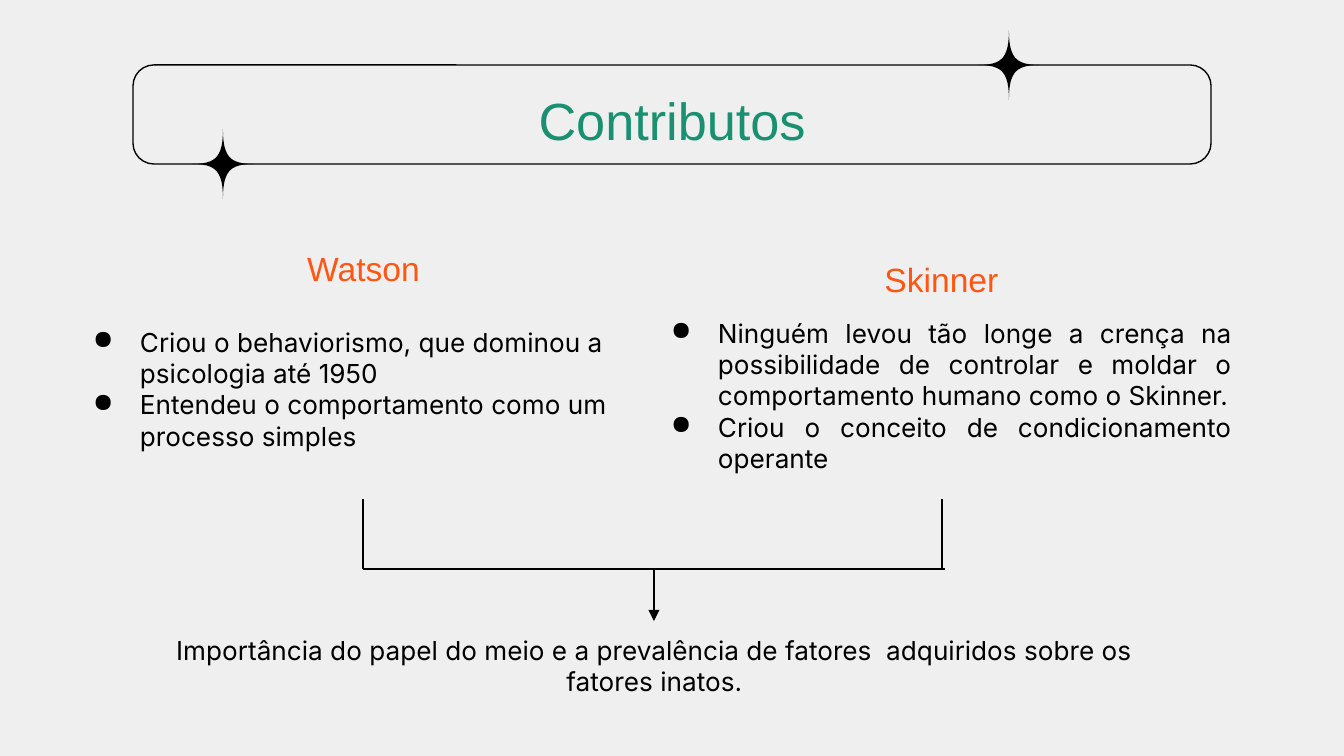
from lxml.etree import SubElement
from pptx import Presentation
from pptx.dml.color import RGBColor
from pptx.enum.shapes import MSO_CONNECTOR as Connector, MSO_SHAPE as Shape
from pptx.enum.text import MSO_ANCHOR as Anchor, PP_ALIGN as Align
from pptx.oxml.ns import qn
from pptx.util import Pt

EMU_PER_PX = 914400 / 134.4
BLACK, GREEN, ORANGE, GREY = "000000", "1B9071", "FF5611", "EFEFEF"
INSET = 13


def px(length):
    """Turn pixels into EMU."""
    return round(length * EMU_PER_PX)


def paint(color_format, color):
    """Set a colour format from a hex string."""
    color_format.rgb = RGBColor.from_string(color)


def add_bullet(paragraph):
    """Give a paragraph a hanging round bullet."""
    properties = paragraph._p.get_or_add_pPr()
    properties.set("marL", str(px(67)))
    properties.set("indent", str(px(-47)))
    bullet_color = SubElement(properties, qn("a:buClr"))
    SubElement(bullet_color, qn("a:srgbClr"), val=BLACK)
    SubElement(properties, qn("a:buChar"), char="●")


def add_text(slide, box, *lines, size=14, font="Inter", color=BLACK,
             align=Align.CENTER, anchor=Anchor.TOP, spacing=None, bullets=False):
    """Write one paragraph per line in a text box."""
    frame = slide.shapes.add_textbox(*map(px, box)).text_frame
    frame.word_wrap = True
    frame.vertical_anchor = anchor
    frame.margin_left = frame.margin_right = px(INSET)
    frame.margin_top = frame.margin_bottom = px(INSET)
    for index, line in enumerate(lines):
        paragraph = frame.add_paragraph() if index else frame.paragraphs[0]
        if bullets:
            add_bullet(paragraph)
        paragraph.alignment = align
        if spacing:
            paragraph.line_spacing = spacing
        run = paragraph.add_run()
        run.text = line
        run.font.size = Pt(size)
        run.font.name = font
        paint(run.font.color, color)


def add_sparkle(slide, center_x, center_y):
    """Draw a four-pointed star with curved sides around a centre."""
    half_width, half_height, pull, steps = 31, 35, 7, 12
    quarter = []
    for step in range(steps):
        t = step / steps
        s = 1 - t
        x = 3 * s * t * t * pull + t ** 3 * half_width
        y = s ** 3 * half_height + 3 * s * s * t * pull
        quarter.append((x, y))
    back = [(x, y) for x, y in reversed(quarter[1:])]
    tip = (half_width, 0)
    outline = (
        [(x, -y) for x, y in quarter] + [tip] + back
        + [(-x, y) for x, y in quarter] + [(-half_width, 0)]
        + [(-x, -y) for x, y in back]
    )
    points = [(px(center_x + x), px(center_y + y)) for x, y in outline]
    builder = slide.shapes.build_freeform(*points[0])
    builder.add_line_segments(points[1:], close=True)
    sparkle = builder.convert_to_shape()
    sparkle.shadow.inherit = False
    sparkle.fill.solid()
    paint(sparkle.fill.fore_color, BLACK)
    sparkle.line.fill.background()


def add_line(slide, start, end, arrow=False):
    """Draw a straight black line, with an arrowhead at its end if asked."""
    line = slide.shapes.add_connector(
        Connector.STRAIGHT, *map(px, start), *map(px, end))
    line.line.width = Pt(1.5)
    paint(line.line.color, BLACK)
    if arrow:
        SubElement(line.line._get_or_add_ln(), qn("a:tailEnd"), type="triangle")
    SubElement(line._element.spPr, qn("a:effectLst"))


def add_banner(slide, box, title):
    """Place the rounded title frame with its two sparkles."""
    left, top, width, height = box
    frame = slide.shapes.add_shape(Shape.ROUNDED_RECTANGLE, *map(px, box))
    frame.adjustments[0] = 0.21
    frame.shadow.inherit = False
    frame.fill.background()
    frame.line.width = Pt(0.75)
    paint(frame.line.color, BLACK)
    add_text(slide, (left + 31, top + 16, width - 62, 67), title, size=28,
             font="Arial", color=GREEN, anchor=Anchor.MIDDLE, spacing=1.15)
    add_sparkle(slide, left + 876, top)
    add_sparkle(slide, left + 90, top + height)


def add_author(slide, box, name, contributions, body_offset, align):
    """Place an author's name above the bulleted contributions."""
    left, top, width, height = box
    add_text(slide, (left, top, width, 67), name,
             size=18, font="Arial", color=ORANGE)
    add_text(slide, (left, top + body_offset, width, height - body_offset),
             *contributions, align=align, bullets=True)


def add_bracket(slide, box):
    """Join both columns with a bracket whose arrow points down."""
    left, top, width, height = box
    right, bar, middle = left + width, top + 70, left + width // 2 + 2
    for x in (left, right):
        add_line(slide, (x, top), (x, bar))
    add_line(slide, (left, bar), (right + 3, bar))
    add_line(slide, (middle, bar), (middle, top + height), arrow=True)


def main():
    """Build and save the slide."""
    deck = Presentation()
    deck.slide_width, deck.slide_height = px(1344), px(756)
    slide = deck.slides.add_slide(deck.slide_layouts[6])
    slide.background.fill.solid()
    paint(slide.background.fill.fore_color, GREY)

    add_banner(slide, (133, 65, 1078, 99), "Contributos")
    add_author(slide, (60, 235, 607, 263), "Watson", (
        "Criou o behaviorismo, que dominou a psicologia até 1950",
        "Entendeu o comportamento como um processo simples",
    ), body_offset=78, align=Align.LEFT)
    add_author(slide, (638, 246, 607, 276), "Skinner", (
        "Ninguém levou tão longe a crença na possibilidade de controlar e "
        "moldar o comportamento humano como o Skinner.",
        "Criou o conceito de condicionamento operante",
    ), body_offset=58, align=Align.JUSTIFY)
    add_bracket(slide, (363, 499, 579, 122))
    add_text(slide, (156, 621, 997, 90),
             "Importância do papel do meio e a prevalência de fatores  "
             "adquiridos sobre os fatores inatos.")
    deck.save("out.pptx")


if __name__ == "__main__":
    main()
